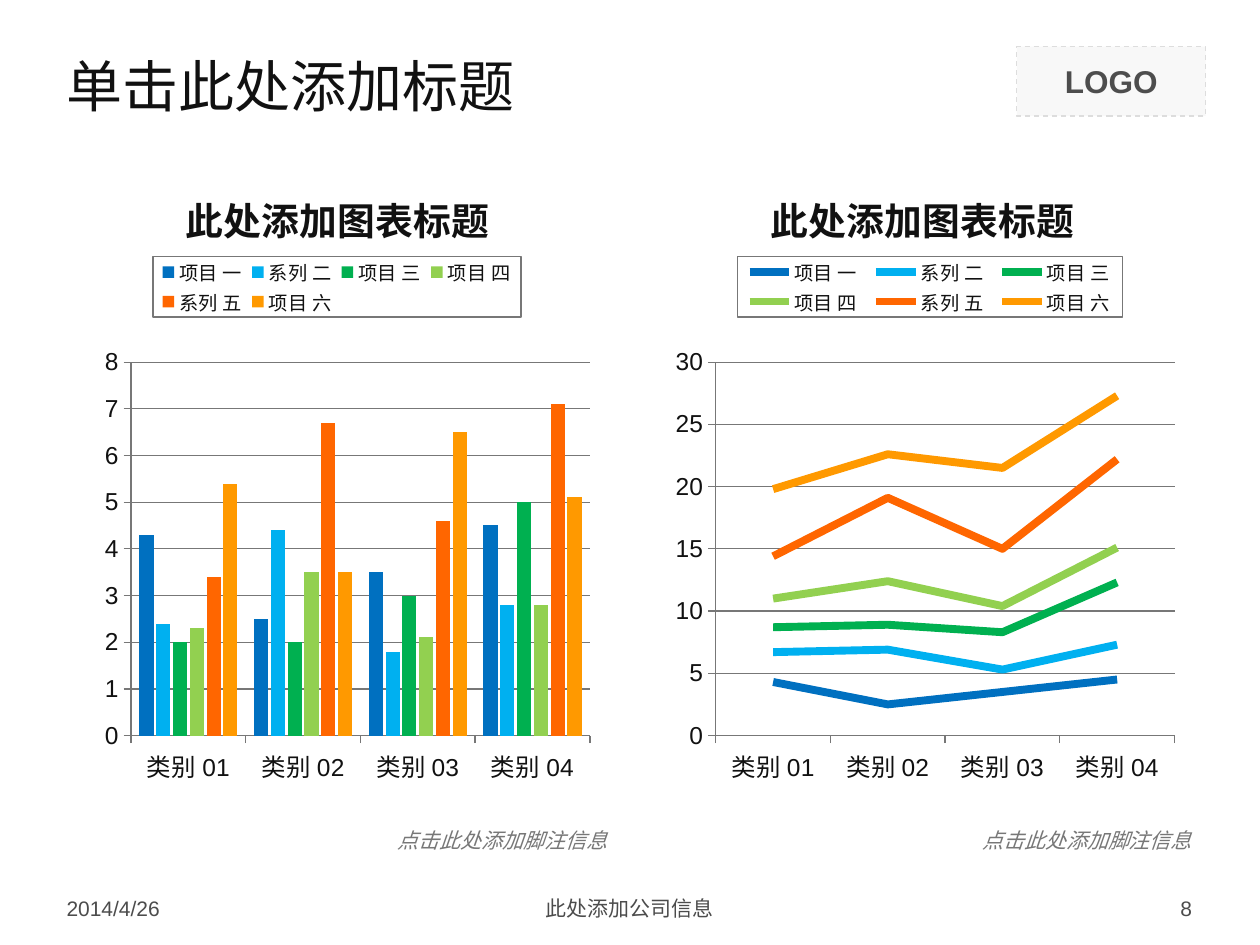
"""Build a slide with a clustered column chart beside a stacked line chart."""
from dataclasses import dataclass

from pptx import Presentation
from pptx.chart.data import CategoryChartData
from pptx.dml.color import RGBColor
from pptx.enum.chart import XL_CHART_TYPE as Kind, XL_LEGEND_POSITION as LegendSpot, XL_TICK_MARK as Tick
from pptx.enum.dml import MSO_LINE
from pptx.enum.shapes import MSO_SHAPE
from pptx.enum.text import MSO_ANCHOR as Anchor, PP_ALIGN as Align
from pptx.oxml import parse_xml
from pptx.oxml.ns import nsdecls
from pptx.util import Inches, Pt


@dataclass(frozen=True)
class Theme:
    font: str = "Arial"
    title_font: str = "Montserrat"
    ink: str = "111111"
    grey: str = "777777"
    footer: str = "4C4C4C"
    logo_ink: str = "4D4D4D"
    logo_fill: str = "F8F8F8"
    logo_line: str = "DDDDDD"
    series: tuple = ("0070C0", "00B0F0", "00B050", "92D050", "FF6600", "FF9900")
    title_size: float = 32
    chart_title_size: float = 21.6
    logo_size: float = 18
    axis_size: float = 14
    small_size: float = 12
    legend_size: float = 11
    hairline: float = 0.75
    trend_line: float = 4.5


theme = Theme()


def style_font(font, size, color, name=theme.font, bold=False, italic=False):
    font.name, font.size, font.bold, font.italic = name, Pt(size), bold, italic
    font.color.rgb = RGBColor.from_string(color)


def place(element, index, **percents):
    for old in element.xpath("./c:layout"):
        element.remove(old)
    modes = "".join(f'<c:{side}Mode val="edge"/>' for side in "xy")
    values = "".join(f'<c:{key} val="{percent / 100:.3f}"/>' for key, percent in percents.items())
    target = '<c:layoutTarget val="inner"/>' if index == 0 else ""
    element.insert(index, parse_xml(
        f'<c:layout {nsdecls("c")}><c:manualLayout>{target}{modes}{values}</c:manualLayout></c:layout>'))


margin, gap, column = 0.43, 0.15, 4.49
full = 2 * column + gap
lefts = [margin + i * (column + gap) for i in range(2)]
chart_top, chart_height = 1.31, 5.2
note_top, note_width = 6.52, 1.88
footer_top, footer_height, footer_width, center_width = 7.06, 0.29, 2.33, 3.17

deck = Presentation()
deck.slide_width, deck.slide_height = Inches(10), Inches(7.5)
page = deck.slides.add_slide(deck.slide_layouts[6])

logo = page.shapes.add_shape(
    MSO_SHAPE.RECTANGLE, Inches(margin + full - 1.49), Inches(0.37), Inches(1.5), Inches(0.55))
logo.shadow.inherit = False
logo.fill.solid()
logo.fill.fore_color.rgb = RGBColor.from_string(theme.logo_fill)
logo.line.color.rgb = RGBColor.from_string(theme.logo_line)
logo.line.width = Pt(theme.hairline)
logo.line.dash_style = MSO_LINE.DASH
logo.text_frame.text = "LOGO"
logo.text_frame.vertical_anchor = Anchor.MIDDLE
logo.text_frame.paragraphs[0].alignment = Align.CENTER
style_font(logo.text_frame.paragraphs[0].runs[0].font, theme.logo_size, theme.logo_ink, bold=True)

title_style = dict(size=theme.title_size, color=theme.ink, name=theme.title_font)
footer_style = dict(size=theme.small_size, color=theme.footer)
note_style = dict(size=theme.small_size, color=theme.grey, italic=True)
texts = [
    ("单击此处添加标题", margin, 0.28, full, 0.79, Align.LEFT, title_style),
    ("2014/4/26", margin, footer_top, footer_width, footer_height, Align.LEFT, footer_style),
    ("此处添加公司信息", 5 - center_width / 2, footer_top, center_width, footer_height, Align.CENTER, footer_style),
    ("8", margin + full - footer_width, footer_top, footer_width, footer_height, Align.RIGHT, footer_style),
] + [
    ("点击此处添加脚注信息", left + column - note_width, note_top, note_width, 0.3, Align.RIGHT, note_style)
    for left in lefts
]
for text, left, top, width, height, align, style in texts:
    box = page.shapes.add_textbox(Inches(left), Inches(top), Inches(width), Inches(height))
    frame = box.text_frame
    frame.text = text
    frame.word_wrap = style is not note_style
    frame.vertical_anchor = Anchor.TOP if style is note_style else Anchor.MIDDLE
    para = frame.paragraphs[0]
    para.alignment = align
    style_font(para.runs[0].font, **style)

data = CategoryChartData()
data.categories = [f"类别 0{number}" for number in range(1, 5)]
for name, values in {
    "项目 一": (4.3, 2.5, 3.5, 4.5),
    "系列 二": (2.4, 4.4, 1.8, 2.8),
    "项目 三": (2, 2, 3, 5),
    "项目 四": (2.3, 3.5, 2.1, 2.8),
    "系列 五": (3.4, 6.7, 4.6, 7.1),
    "项目 六": (5.4, 3.5, 6.5, 5.1),
}.items():
    data.add_series(name, values)

charts = [(Kind.COLUMN_CLUSTERED, 8, 1, 65), (Kind.LINE_STACKED, 30, 5, 68)]
for left, (kind, maximum, step, legend_width) in zip(lefts, charts):
    chart = page.shapes.add_chart(
        kind, Inches(left), Inches(chart_top), Inches(column), Inches(chart_height), data).chart
    style_font(chart.font, theme.logo_size, theme.ink)

    heading = chart.chart_title
    heading.text_frame.text = "此处添加图表标题"
    style_font(heading.text_frame.paragraphs[0].runs[0].font, theme.chart_title_size, theme.ink, bold=True)
    heading.include_in_layout = False
    place(chart.element.xpath(".//c:title")[0], 1, x=22, y=2.2)

    chart.has_legend = True
    chart.legend.position = LegendSpot.TOP
    chart.legend.include_in_layout = False
    style_font(chart.legend.font, theme.legend_size, theme.ink)
    legend = chart.element.xpath(".//c:legend")[0]
    place(legend, 1, x=17.5, y=14, w=legend_width, h=9.2)
    legend.xpath("./c:txPr")[0].addprevious(parse_xml(
        f'<c:spPr {nsdecls("c", "a")}><a:ln w="{Pt(theme.hairline)}"><a:solidFill>'
        f'<a:srgbClr val="{theme.grey}"/></a:solidFill></a:ln></c:spPr>'))
    place(chart.element.xpath(".//c:plotArea")[0], 0, x=13.6, y=30.1, w=81.1, h=57)

    scale = chart.value_axis
    scale.minimum_scale, scale.maximum_scale, scale.major_unit = 0, maximum, step
    scale.has_major_gridlines = True
    for axis in (chart.category_axis, scale):
        axis.major_tick_mark, axis.minor_tick_mark = Tick.OUTSIDE, Tick.NONE
        style_font(axis.tick_labels.font, theme.axis_size, theme.ink)
    for line in (chart.category_axis.format.line, scale.format.line, scale.major_gridlines.format.line):
        line.color.rgb = RGBColor.from_string(theme.grey)
        line.width = Pt(theme.hairline)

    plot = chart.plots[0]
    plot.vary_by_categories = False
    if kind == Kind.COLUMN_CLUSTERED:
        plot.gap_width, plot.overlap = 117, -18
    for series, color in zip(plot.series, theme.series):
        if kind == Kind.COLUMN_CLUSTERED:
            series.format.fill.solid()
            series.format.fill.fore_color.rgb = RGBColor.from_string(color)
        else:
            series.smooth = False
            series.format.line.color.rgb = RGBColor.from_string(color)
            series.format.line.width = Pt(theme.trend_line)

deck.save("out.pptx")
